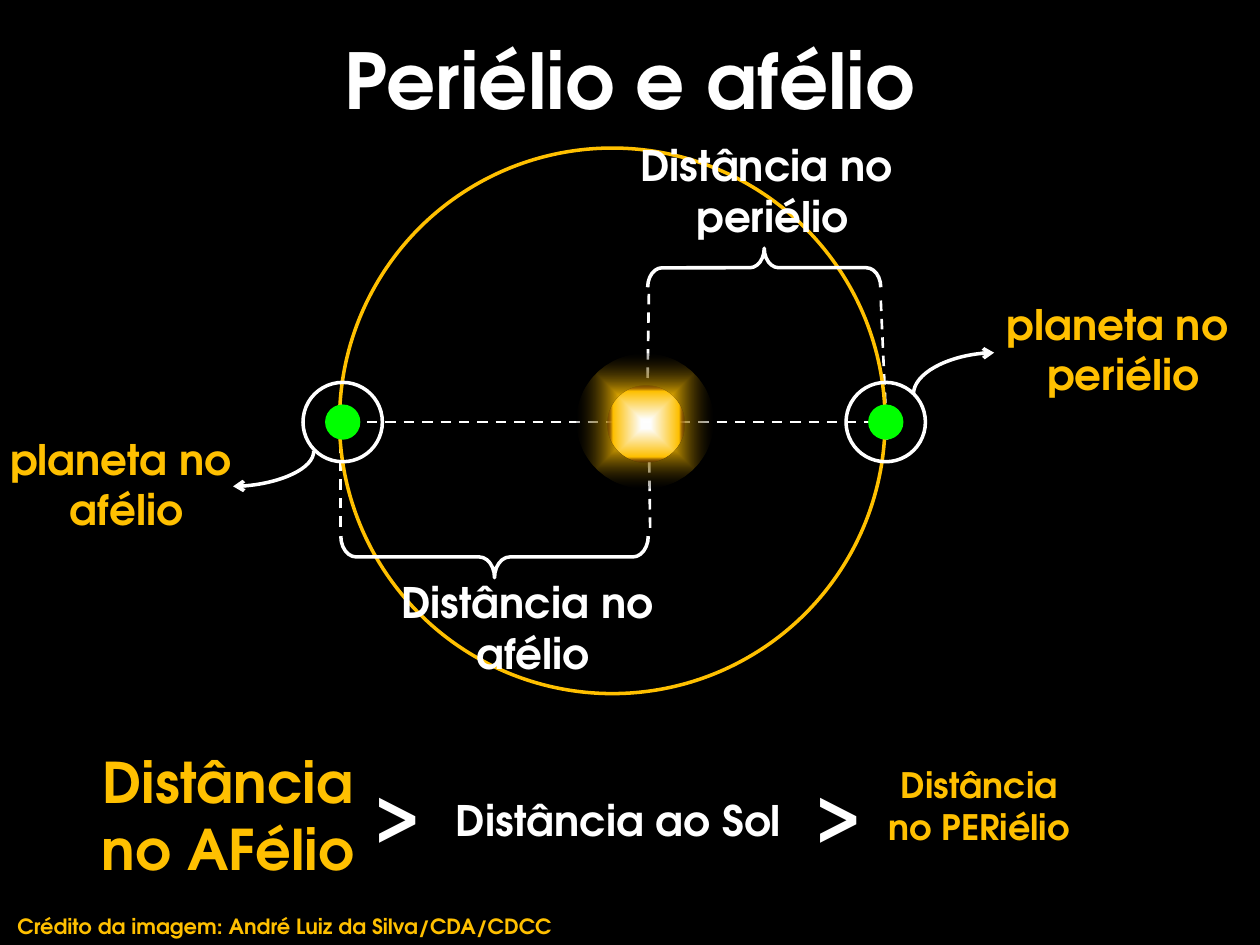
"""Build a slide on perihelion and aphelion distances."""
from dataclasses import dataclass

from pptx import Presentation, oxml, util as u
from pptx.dml.color import RGBColor
from pptx.enum import dml, shapes, text
from pptx.oxml import ns

PX = u.Inches(1) // 100


@dataclass(frozen=True)
class Theme:
    """Colours, font and type sizes of the slide."""
    font: str = "TeX Gyre Adventor"
    black: str = "000000"
    white: str = "FFFFFF"
    gold: str = "FFC000"
    green: str = "00FF00"
    ember: str = "4D0808"
    title: int = 44
    sign: int = 36
    large: int = 32
    label: int = 24
    small: int = 20
    credit: int = 12


THEME = Theme()


def rgb(colour):
    """Turn a hex string into a colour."""
    return RGBColor.from_string(colour)


def px(*lengths):
    """Turn whole px into EMU."""
    return [round(length * PX) for length in lengths]


def write(frame, lines, size=THEME.label, colour=THEME.white,
          align=text.PP_ALIGN.CENTER, fit=text.MSO_AUTO_SIZE.SHAPE_TO_FIT_TEXT):
    """Fill a frame with lines, each a string or a list of (string, size)."""
    frame.word_wrap = True
    frame.auto_size = fit
    frame.vertical_anchor = text.MSO_ANCHOR.TOP
    for index, line in enumerate(lines):
        para = frame.add_paragraph() if index else frame.paragraphs[0]
        para.alignment = align
        for words, points in [(line, size)] if isinstance(line, str) else line:
            span = para.add_run()
            span.text = words
            span.font.name = THEME.font
            span.font.size = u.Pt(points)
            span.font.bold = True
            span.font.color.rgb = rgb(colour)


def add_text(page, at, lines, **style):
    """Add a text box and return its frame."""
    box = page.shapes.add_textbox(*px(*at))
    write(box.text_frame, lines, **style)
    return box.text_frame


def add_tabs(para, *stops):
    """Set left tab stops on a paragraph."""
    tabs = oxml.parse_xml(f"<a:tabLst {ns.nsdecls('a')}>" + "".join(
        f'<a:tab pos="{stop}" algn="l"/>' for stop in px(*stops)) + "</a:tabLst>")
    para._p.get_or_add_pPr().append(tabs)


def add_shape(parent, kind, at, fill=None, line=None, turn=0):
    """Add a preset shape with an optional plain fill and outline."""
    shape = parent.shapes.add_shape(kind, *px(*at))
    shape.shadow.inherit = False
    shape.rotation = turn
    if fill:
        shape.fill.solid()
        shape.fill.fore_color.rgb = rgb(fill)
    else:
        shape.fill.background()
    if line:
        shape.line.color.rgb = rgb(line)
        shape.line.width = u.Pt(2)
    else:
        shape.line.fill.background()
    return shape


def add_circle(page, centre, diameter, **style):
    """Add a circle around a centre."""
    x, y = centre
    at = (x - diameter / 2, y - diameter / 2, diameter, diameter)
    add_shape(page, shapes.MSO_SHAPE.OVAL, at, **style)


def add_brace(page, at, turn):
    """Add a turned brace."""
    brace = add_shape(page, shapes.MSO_SHAPE.LEFT_BRACE, at, line=THEME.white, turn=turn)
    brace.adjustments[0] = 0.37
    brace.adjustments[1] = 0.5


def add_glow(group, at, stops):
    """Add an ellipse with a centred gradient of (place, colour, opacity) stops."""
    glow = add_shape(group, shapes.MSO_SHAPE.OVAL, at, fill=THEME.gold)
    marks = "".join(
        f'<a:gs pos="{place * 1000}"><a:srgbClr val="{colour}">'
        f'<a:alpha val="{opacity * 1000}"/></a:srgbClr></a:gs>'
        for place, colour, opacity in stops)
    gradient = oxml.parse_xml(
        f"<a:gradFill {ns.nsdecls('a')}><a:gsLst>{marks}</a:gsLst>"
        '<a:path path="shape"><a:fillToRect l="50000" t="50000" r="50000" b="50000"/>'
        "</a:path></a:gradFill>")
    properties = glow._element.spPr
    properties.replace(properties.find(ns.qn("a:solidFill")), gradient)


def add_line(page, kind, start, end, width):
    """Add a white connector without a shadow."""
    line = page.shapes.add_connector(kind, *px(*start, *end))
    line.line.color.rgb = rgb(THEME.white)
    line.line.width = u.Pt(width)
    line._element.spPr.append(oxml.parse_xml(f"<a:effectLst {ns.nsdecls('a')}/>"))
    return line


def add_dashes(page, start, end):
    """Add a dashed straight line."""
    line = add_line(page, shapes.MSO_CONNECTOR.STRAIGHT, start, end, 1.5)
    line.line.dash_style = dml.MSO_LINE.DASH


def add_curved_arrow(page, start, end):
    """Add a quarter-turn arrow that leaves its start vertically."""
    x, y = ((a + b) / 2 for a, b in zip(start, end))
    across, down = start[0] - x, start[1] - y
    arrow = add_line(page, shapes.MSO_CONNECTOR.CURVE,
                     (x + down, y - across), (x - down, y + across), 2)
    properties = arrow._element.spPr
    properties.find(ns.qn("a:xfrm")).set("rot", str(90 * 60000))
    properties.find(ns.qn("a:prstGeom")).set("prst", "curvedConnector2")
    arrow.line._ln.append(oxml.parse_xml(f'<a:tailEnd {ns.nsdecls("a")} type="arrow"/>'))


def add_orbit(page):
    """Draw the guides, orbit, braces, planets and Sun."""
    for start, end in [((270, 418), (270, 335)), ((516, 419), (515, 347)),
                       ((514, 300), (515, 230)), ((704, 349), (699, 237)),
                       ((262, 335), (713, 335))]:
        add_dashes(page, start, end)
    add_circle(page, (486, 334), 433, line=THEME.gold)
    add_brace(page, (591, 120, 31, 185), 90)
    add_brace(page, (376, 320, 33, 244), 270)
    for centre in [(272, 335), (703, 335)]:
        add_circle(page, centre, 63, line=THEME.white)
        add_circle(page, centre, 28, fill=THEME.green)
    add_curved_arrow(page, (725, 313), (789, 280))
    add_curved_arrow(page, (249, 358), (185, 386))
    sun = page.shapes.add_group_shape()
    add_glow(sun, (458, 281, 108, 107),
             [(7, THEME.white, 100), (32, THEME.gold, 100), (100, THEME.black, 23)])
    add_glow(sun, (482, 306, 61, 61),
             [(12, THEME.white, 100), (85, THEME.gold, 100), (100, THEME.ember, 17)])


def add_labels(page):
    """Write the labels, the comparison and the credit."""
    gold = THEME.gold
    add_text(page, (459, 106, 308, 91), ["Distância no ", "periélio"])
    add_text(page, (269, 453, 308, 91), ["Distância no ", "afélio"])
    add_text(page, (763, 232, 257, 91), ["planeta no ", "periélio"], colour=gold)
    add_text(page, (-28, 339, 257, 91), ["planeta no ", "afélio"], colour=gold)
    add_text(page, (67, 588, 228, 118), ["Distância ", "no AFélio"],
             size=THEME.large, colour=gold)
    add_text(page, (666, 601, 230, 77), ["Distância ", "no PERiélio "],
             size=THEME.small, colour=gold)
    comparison = [(">\t", THEME.sign), ("Distância ao Sol\t", THEME.label), (">", THEME.sign)]
    frame = add_text(page, (287, 609, 425, 71), [comparison], align=text.PP_ALIGN.LEFT)
    add_tabs(frame.paragraphs[0], 65, 350)
    add_text(page, (4, 720, 528, 30), ["Crédito da imagem: André Luiz da Silva/CDA/CDCC"],
             size=THEME.credit, colour=gold, align=text.PP_ALIGN.LEFT)


def main():
    """Build and save the deck."""
    deck = Presentation()
    deck.slide_width, deck.slide_height = px(1000, 750)
    page = deck.slides.add_slide(deck.slide_layouts[5])
    page.background.fill.solid()
    page.background.fill.fore_color.rgb = rgb(THEME.black)
    title = page.shapes.title
    title.left, title.top, title.width, title.height = px(75, 21, 850, 161)
    write(title.text_frame, ["Periélio e afélio"], size=THEME.title,
          fit=text.MSO_AUTO_SIZE.NONE)
    add_orbit(page)
    add_labels(page)
    deck.save("out.pptx")


if __name__ == "__main__":
    main()
